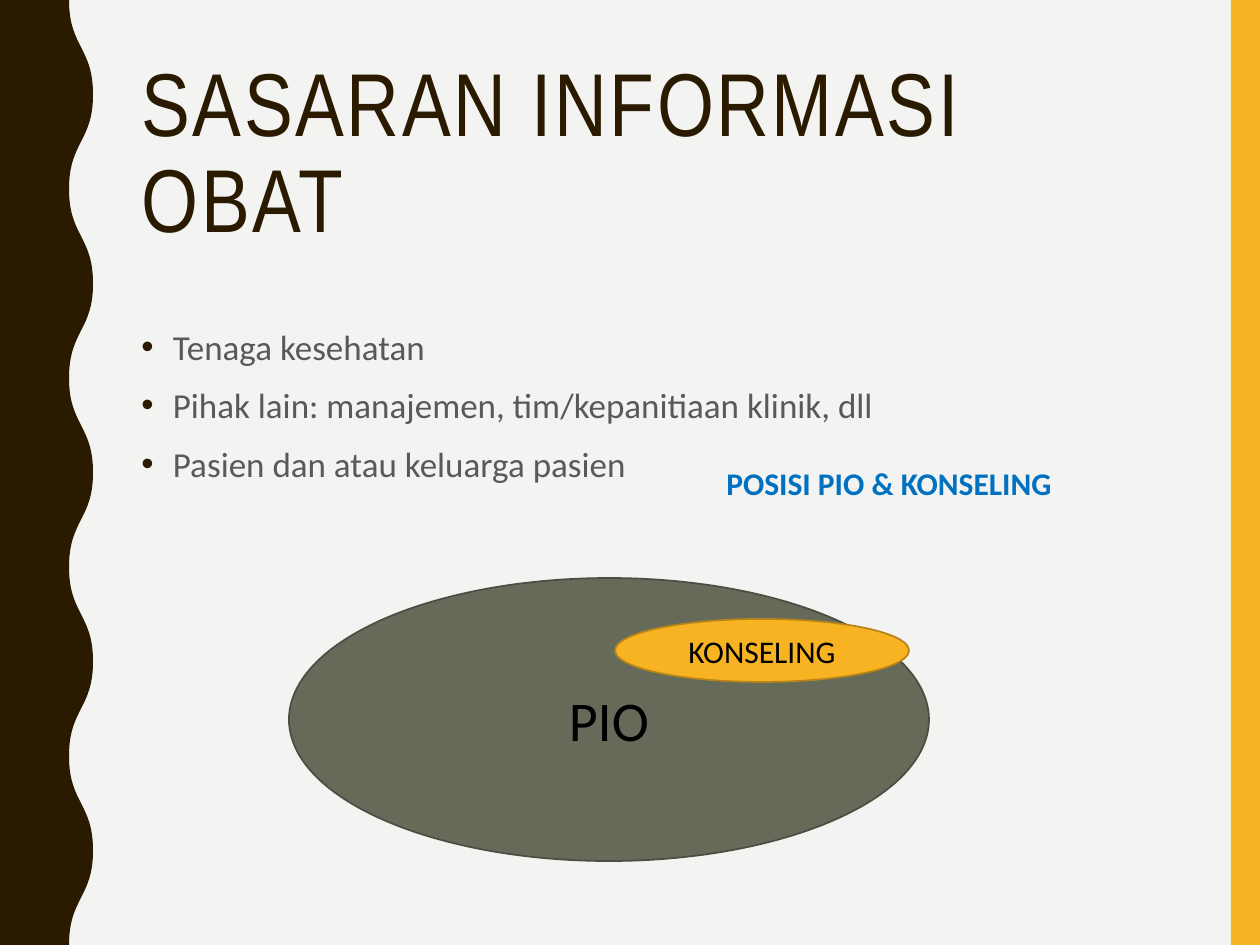
from dataclasses import dataclass

from lxml.etree import SubElement
from pptx import Presentation
from pptx.dml.color import RGBColor
from pptx.enum.shapes import MSO_SHAPE
from pptx.enum.text import MSO_ANCHOR, MSO_AUTO_SIZE, PP_ALIGN
from pptx.oxml.ns import qn
from pptx.shapes.base import BaseShape
from pptx.slide import Slide
from pptx.text.text import _Paragraph as Paragraph
from pptx.util import Emu, Inches, Pt

PX_PER_INCH = 126
SLIDE_WIDTH, SLIDE_HEIGHT = 1260, 945

PAPER = RGBColor(0xF3, 0xF3, 0xF2)
BROWN = RGBColor(0x2A, 0x1A, 0x00)
AMBER = RGBColor(0xF8, 0xB3, 0x23)
AMBER_EDGE = RGBColor(0xB7, 0x84, 0x1A)
OLIVE = RGBColor(0x65, 0x6A, 0x59)
OLIVE_EDGE = RGBColor(0x4B, 0x4E, 0x42)
GREY = RGBColor(0x59, 0x59, 0x59)
BLUE = RGBColor(0x00, 0x70, 0xC0)
BLACK = RGBColor(0x00, 0x00, 0x00)


@dataclass(frozen=True)
class Box:
    left: int
    top: int
    width: int
    height: int

    def emu(self) -> tuple[Emu, Emu, Emu, Emu]:
        return px(self.left), px(self.top), px(self.width), px(self.height)


@dataclass(frozen=True)
class Service:
    label: str
    box: Box
    size: int
    fill: RGBColor
    edge: RGBColor


SERVICES = [
    Service("PIO", Box(289, 578, 640, 283), 32, OLIVE, OLIVE_EDGE),
    Service("KONSELING", Box(615, 619, 294, 63), 18, AMBER, AMBER_EDGE),
]
AUDIENCES = [
    "Tenaga kesehatan",
    "Pihak lain: manajemen, tim/kepanitiaan klinik, dll",
    "Pasien dan atau keluarga pasien",
]


def px(length: float) -> Emu:
    return Emu(round(length * Inches(1) / PX_PER_INCH))


def style(paragraph: Paragraph, size: int, color: RGBColor, face: str = "Calibri") -> None:
    paragraph.font.name = face
    paragraph.font.size = Pt(size)
    paragraph.font.color.rgb = color


def paint(shape: BaseShape, fill: RGBColor) -> None:
    shape.shadow.inherit = False
    shape.fill.solid()
    shape.fill.fore_color.rgb = fill
    shape.line.fill.background()


def add_bullet(paragraph: Paragraph) -> None:
    properties = paragraph._p.get_or_add_pPr()
    properties.set("marL", str(Inches(0.25)))
    properties.set("indent", str(-Inches(0.25)))
    bullet_color = SubElement(properties, qn("a:buClr"))
    SubElement(bullet_color, qn("a:srgbClr"), val=str(BROWN))
    SubElement(properties, qn("a:buFont"), typeface="Arial")
    SubElement(properties, qn("a:buChar"), char="•")


def add_wavy_band(slide: Slide) -> None:
    trough, crest, waves = 69, 93, 10
    edge = [
        (px(crest if turn % 2 else trough), px(SLIDE_HEIGHT * turn / waves))
        for turn in range(waves + 1)
    ]
    builder = slide.shapes.build_freeform(*edge[0])
    builder.add_line_segments([*edge[1:], (0, px(SLIDE_HEIGHT)), (0, 0)], close=True)
    band = builder.convert_to_shape()
    paint(band, BROWN)

    segments = list(band._element.iter(qn("a:lnTo")))[:waves]
    for segment, (start_x, start_y), (end_x, end_y) in zip(segments, edge, edge[1:]):
        middle = (start_y + end_y) // 2
        segment.tag = qn("a:cubicBezTo")
        for position, (x, y) in enumerate([(start_x, middle), (end_x, middle)]):
            control = SubElement(segment, qn("a:pt"), x=str(x), y=str(y))
            segment.insert(position, control)


def add_title(slide: Slide) -> None:
    title = slide.shapes.title
    title.left, title.top, title.width, title.height = Box(129, 53, 1052, 205).emu()
    frame = title.text_frame
    frame.text = "SASARAN INFORMASI OBAT"
    frame.word_wrap = True
    frame.auto_size = MSO_AUTO_SIZE.NONE
    frame.vertical_anchor = MSO_ANCHOR.MIDDLE
    heading = frame.paragraphs[0]
    heading.alignment = PP_ALIGN.LEFT
    heading.line_spacing = 0.9
    style(heading, 51, BROWN, "Arial Narrow")
    heading.runs[0].font._element.set("spc", "150")


def add_audiences(slide: Slide) -> None:
    frame = slide.shapes.add_textbox(*Box(129, 315, 1052, 495).emu()).text_frame
    frame.word_wrap = True
    frame.text = "\n".join(AUDIENCES)
    for audience in frame.paragraphs:
        audience.line_spacing = 1.1
        audience.space_before = Pt(7)
        add_bullet(audience)
        style(audience, 20, GREY)


def add_service(slide: Slide, service: Service) -> None:
    ellipse = slide.shapes.add_shape(MSO_SHAPE.OVAL, *service.box.emu())
    paint(ellipse, service.fill)
    ellipse.line.color.rgb = service.edge
    ellipse.line.width = Pt(1)
    frame = ellipse.text_frame
    frame.text = service.label
    frame.vertical_anchor = MSO_ANCHOR.MIDDLE
    label = frame.paragraphs[0]
    label.alignment = PP_ALIGN.CENTER
    style(label, service.size, BLACK)


def add_caption(slide: Slide) -> None:
    frame = slide.shapes.add_textbox(*Box(714, 458, 451, 50).emu()).text_frame
    frame.word_wrap = True
    frame.auto_size = MSO_AUTO_SIZE.SHAPE_TO_FIT_TEXT
    frame.text = "POSISI PIO & KONSELING"
    caption = frame.paragraphs[0]
    style(caption, 18, BLUE)
    caption.font.bold = True


def main() -> None:
    presentation = Presentation()
    presentation.slide_width = px(SLIDE_WIDTH)
    presentation.slide_height = px(SLIDE_HEIGHT)
    slide = presentation.slides.add_slide(presentation.slide_layouts[5])
    slide.background.fill.solid()
    slide.background.fill.fore_color.rgb = PAPER

    side_bar = slide.shapes.add_shape(
        MSO_SHAPE.RECTANGLE, *Box(1231, 0, 29, SLIDE_HEIGHT).emu()
    )
    paint(side_bar, AMBER)
    add_wavy_band(slide)
    add_title(slide)
    add_audiences(slide)
    for service in SERVICES:
        add_service(slide, service)
    add_caption(slide)
    presentation.save("out.pptx")


if __name__ == "__main__":
    main()
